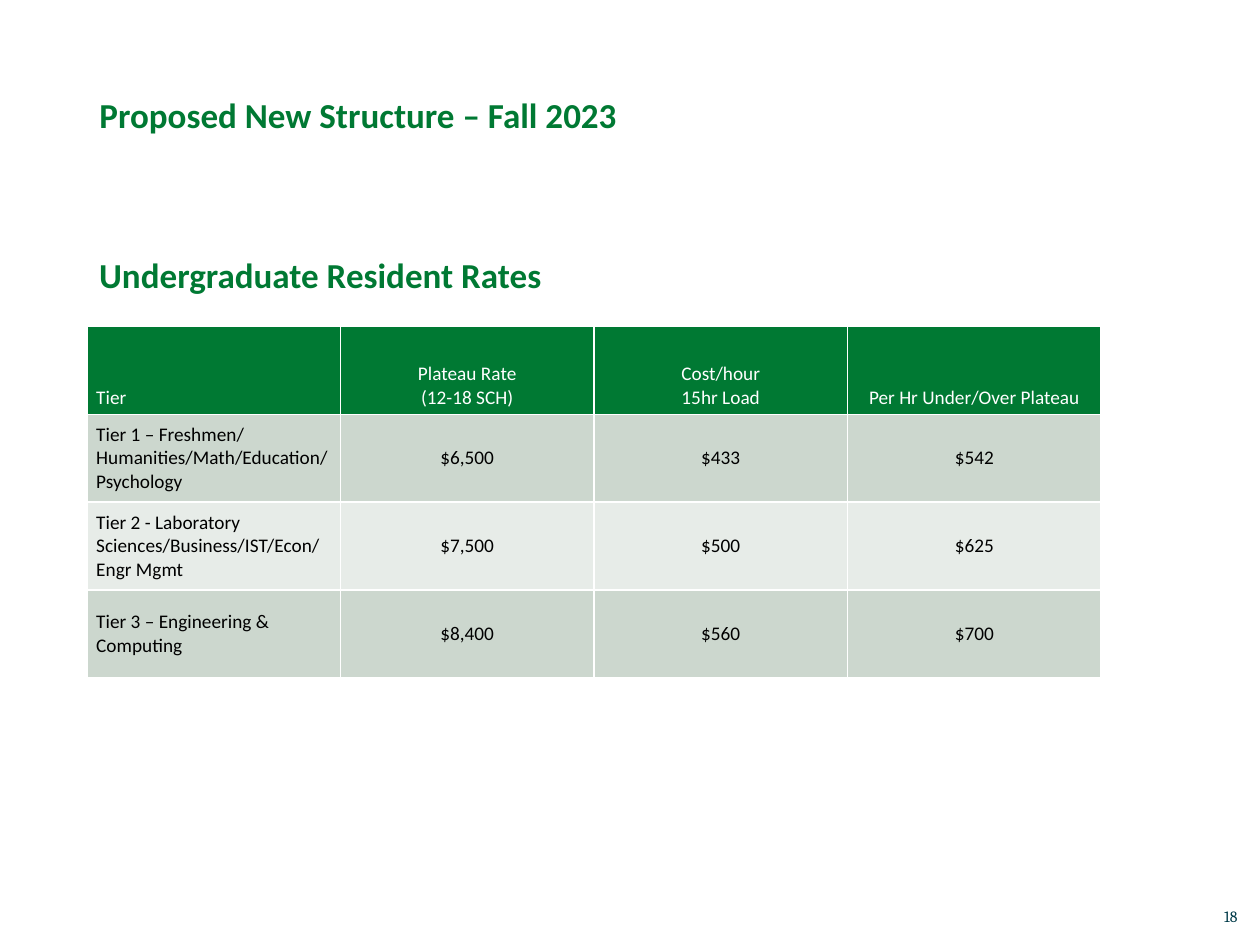
from pptx import Presentation
from pptx.dml.color import RGBColor
from pptx.enum import text as t
from pptx.util import Cm, Pt

INK = {"green": "007933", "navy": "003B49", "white": "FFFFFF",
       "black": "000000", "sage": "CCD7CE", "mist": "E7ECE8"}

RATES = [
    ["Tier", "Plateau Rate\n(12-18 SCH)", "Cost/hour\n15hr Load",
     "Per Hr Under/Over Plateau"],
    ["Tier 1 – Freshmen/ Humanities/Math/Education/Psychology",
     "$6,500", "$433", "$542"],
    ["Tier 2 - Laboratory Sciences/Business/IST/Econ/\nEngr Mgmt",
     "$7,500", "$500", "$625"],
    ["Tier 3 – Engineering & Computing", "$8,400", "$560", "$700"],
]


def style(frame, size, ink, bold=False, face="Calibri", side=t.PP_ALIGN.LEFT):
    for para in frame.paragraphs:
        para.alignment = side
        for run in para.runs:
            font = run.font
            font.name, font.size, font.bold = face, Pt(size), bold
            font.color.rgb = RGBColor.from_string(INK[ink])


def place(shape, box):
    shape.left, shape.top, shape.width, shape.height = map(Cm, box)


def add_title(slide, box, words):
    title = slide.shapes.title
    place(title, box)
    frame = title.text_frame
    frame.text = words
    frame.vertical_anchor = t.MSO_ANCHOR.MIDDLE
    frame.paragraphs[0].line_spacing = 0.9
    style(frame, 20, "green", bold=True)


def add_label(slide, box, words, size, ink, **look):
    frame = slide.shapes.add_textbox(*map(Cm, box)).text_frame
    frame.word_wrap = True
    frame.text = words
    style(frame, size, ink, **look)


def add_rates(slide, box, rows):
    shape = slide.shapes.add_table(len(rows), len(rows[0]), *map(Cm, box))
    table = shape.table
    for r, row in enumerate(rows):
        head = r == 0
        fill = "green" if head else "sage" if r % 2 else "mist"
        for c, words in enumerate(row):
            cell = table.cell(r, c)
            cell.text = words
            cell.margin_left = cell.margin_right = Cm(0.19)
            cell.margin_top = cell.margin_bottom = Cm(0.1)
            cell.vertical_anchor = (t.MSO_ANCHOR.BOTTOM if head
                                    else t.MSO_ANCHOR.MIDDLE)
            cell.fill.solid()
            cell.fill.fore_color.rgb = RGBColor.from_string(INK[fill])
            style(cell.text_frame, 11, "white" if head else "black",
                  side=t.PP_ALIGN.CENTER if c else t.PP_ALIGN.LEFT)


def main():
    deck = Presentation()
    deck.slide_width, deck.slide_height = Cm(25.4), Cm(19.05)
    slide = deck.slides.add_slide(deck.slide_layouts[5])
    left = 1.75
    add_title(slide, (left, 1.02, 21.03, 2.67),
              "Proposed New Structure – Fall 2023")
    add_rates(slide, (left, 6.58, 20.45, 7.09), RATES)
    add_label(slide, (left, 4.98, 20.75, 1.12),
              "Undergraduate Resident Rates", 20, "green", bold=True)
    add_label(slide, (24.43, 18.16, 1.3, 0.64), "18", 9, "navy",
              face="Cambria")
    deck.save("out.pptx")


if __name__ == "__main__":
    main()
